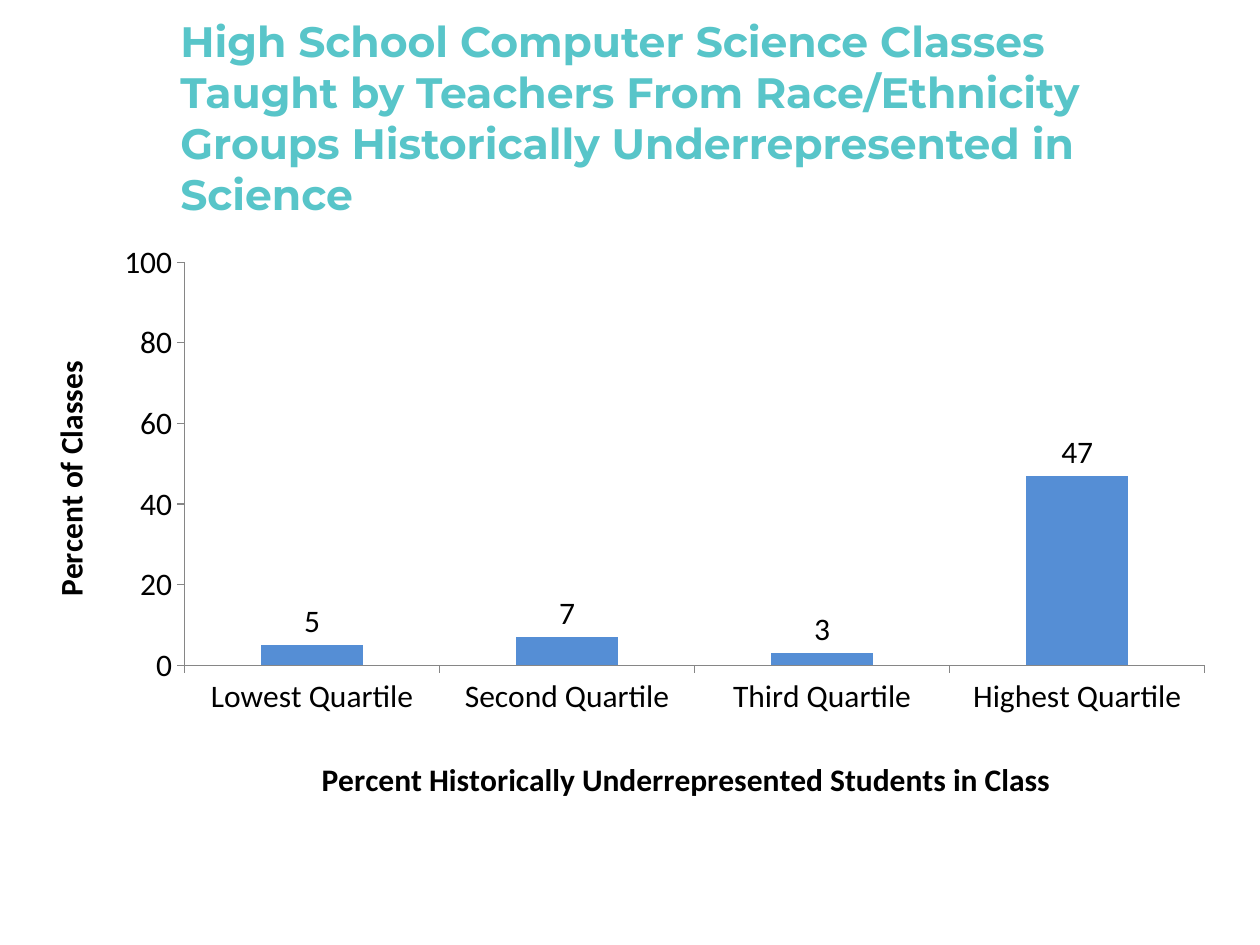
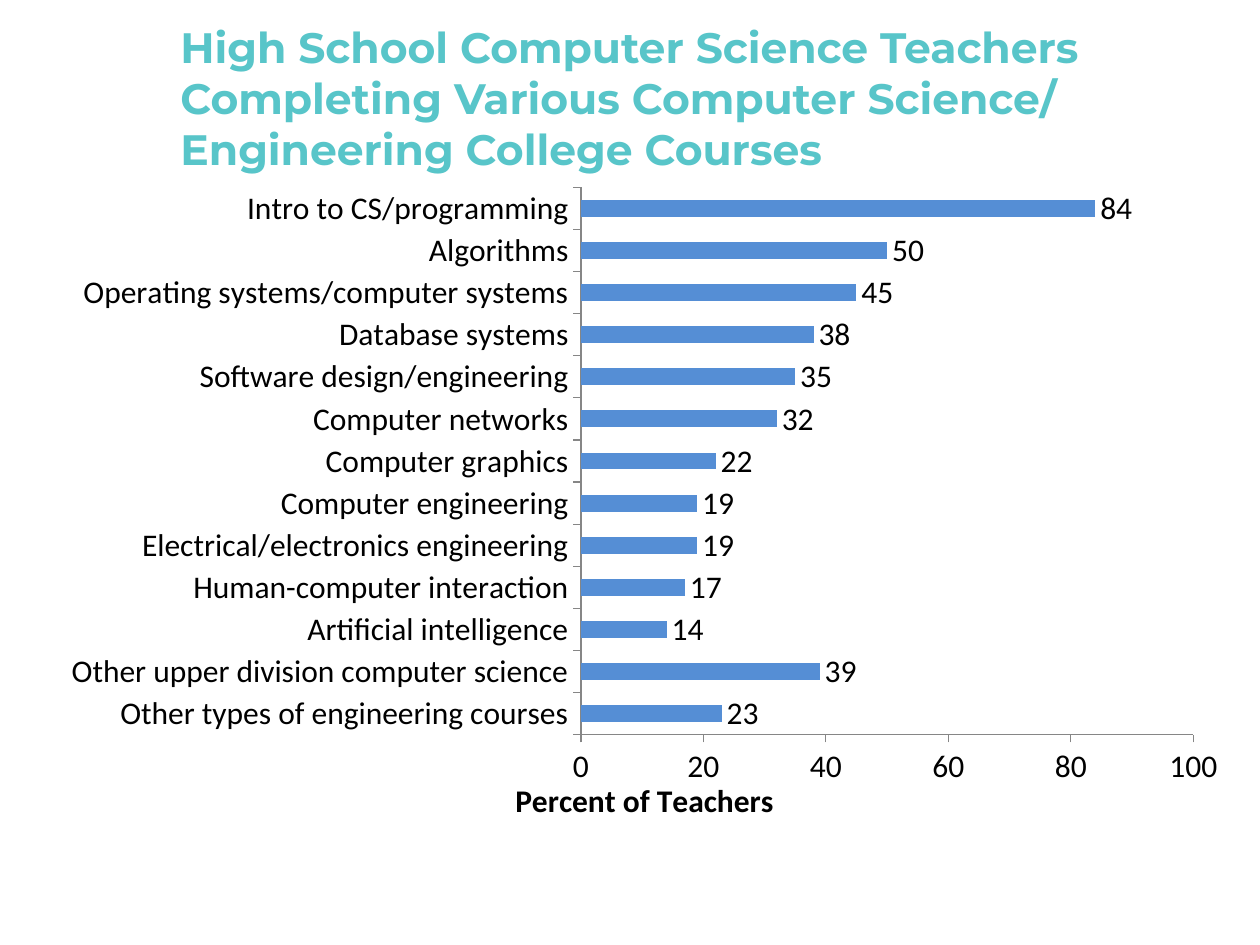
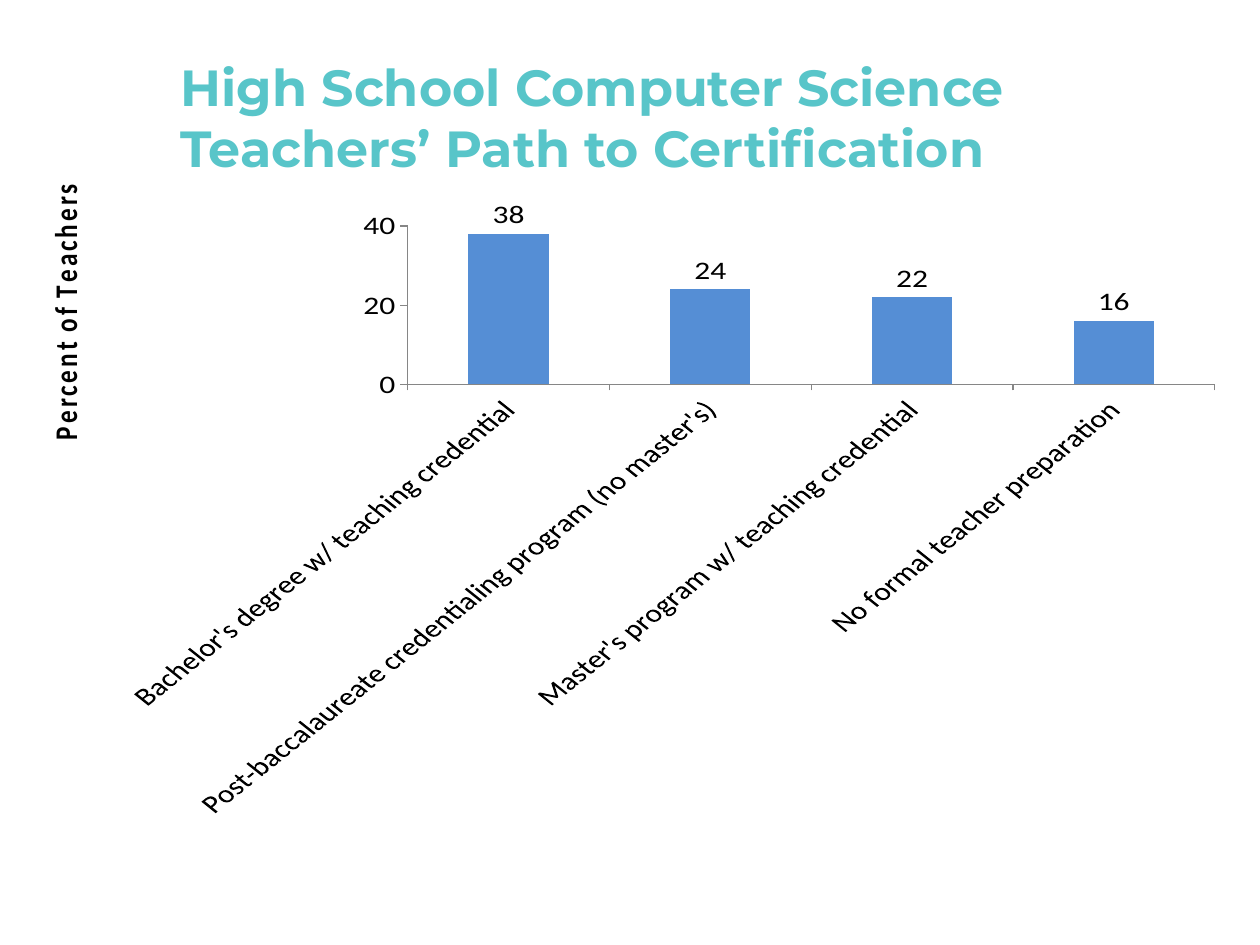
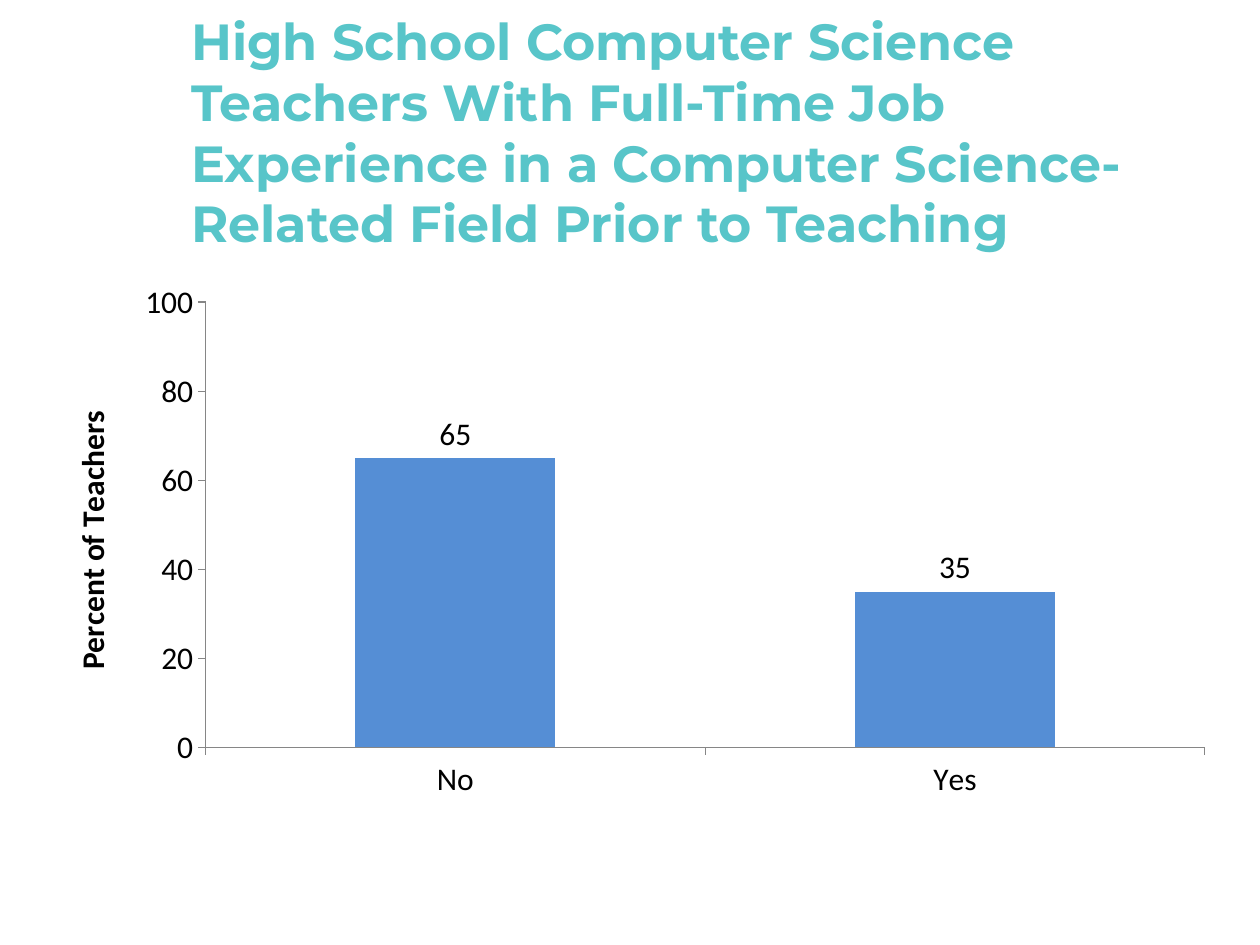
from lxml import etree
from pptx import Presentation
from pptx.chart.data import CategoryChartData
from pptx.dml.color import RGBColor
from pptx.enum.chart import XL_CHART_TYPE, XL_LABEL_POSITION, XL_TICK_MARK
from pptx.enum.text import MSO_ANCHOR
from pptx.oxml.ns import qn
from pptx.util import Pt

COLUMN = XL_CHART_TYPE.COLUMN_CLUSTERED
BAR = XL_CHART_TYPE.BAR_CLUSTERED
OUT_END = XL_LABEL_POSITION.OUTSIDE_END
OUT, NONE = XL_TICK_MARK.OUTSIDE, XL_TICK_MARK.NONE
MIDDLE = MSO_ANCHOR.MIDDLE

COLORS = {"title": "58C5C9", "bar": "558ED5", "text": "000000", "axis": "868686"}
HEAD_FONT, BODY_FONT = "Montserrat", "Calibri"
UP, SLANT = -5400000, -2700000  # text angles in 1/60000 degree


def color(key):
    return RGBColor.from_string(COLORS[key])


def style(font, size, key, name, bold):
    font.size, font.name, font.bold = Pt(size), name, bold
    font.color.rgb = color(key)


def add_title(slide, box, lines, size, drop=0):
    """Title centred on the box height, moved down by a larger top inset."""
    frame = slide.shapes.add_textbox(*map(Pt, box)).text_frame
    frame.word_wrap = True
    frame.vertical_anchor = MIDDLE
    frame.margin_top = Pt(3.6 + drop)
    para = frame.paragraphs[0]
    for i, line in enumerate(lines):
        if i:
            para.add_line_break()
        run = para.add_run()
        run.text = line
        style(run.font, size, "title", HEAD_FONT, True)


def set_layout(node, index, box, spot):
    """Fix a chart part at a spot (x, y and maybe w, h) in points within box."""
    old = node.find(qn("c:layout"))
    if old is not None:
        node.remove(old)
    layout = etree.Element(qn("c:layout"))
    manual = etree.SubElement(layout, qn("c:manualLayout"))
    items = [("xMode", "edge"), ("yMode", "edge")]
    if len(spot) == 4:
        items.insert(0, ("layoutTarget", "inner"))
    sizes = (box[2], box[3]) * 2
    items += [(tag, f"{part / whole:.4f}")
              for tag, part, whole in zip("xywh", spot, sizes)]
    for tag, val in items:
        etree.SubElement(manual, qn("c:" + tag)).set("val", val)
    node.insert(index, layout)


def turn(node, angle):
    body = next(node.iter(qn("a:bodyPr")))
    body.set("rot", str(angle))
    body.set("vert", "horz")


def name_axis(axis, box, text, spot=None, angle=0):
    title = axis.axis_title
    run = title.text_frame.paragraphs[0].add_run()
    run.text = text
    style(run.font, 18, "text", BODY_FONT, True)
    node = title._element
    turn(node, angle)
    if spot:
        set_layout(node, 1, box, spot)


def add_bars(slide, box, kind, rows, val_name, cat_name=None, plot=None,
             low=None, top=None, gap=150, slant=False):
    """Bar or column chart; plot and axis names are placed within the box."""
    data = CategoryChartData()
    data.categories = [cat for cat, _ in rows]
    data.add_series("Series 1", [val for _, val in rows])
    chart = slide.shapes.add_chart(kind, *map(Pt, box), data).chart
    chart.has_legend = chart.has_title = False
    style(chart.font, 18, "text", BODY_FONT, False)

    # Bars and their values
    bars = chart.plots[0]
    bars.gap_width = gap
    bars.vary_by_categories = False
    fill = bars.series[0].format.fill
    fill.solid()
    fill.fore_color.rgb = color("bar")
    bars.has_data_labels = True
    tags = bars.data_labels
    tags.show_value = True
    tags.position = OUT_END
    style(tags.font, 18, "text", BODY_FONT, False)

    # Axes
    cats, vals = chart.category_axis, chart.value_axis
    for axis in (cats, vals):
        axis.has_major_gridlines = False
        axis.major_tick_mark, axis.minor_tick_mark = OUT, NONE
        axis.format.line.color.rgb = color("axis")
        axis.format.line.width = Pt(0.75)
        style(axis.tick_labels.font, 18, "text", BODY_FONT, False)
    vals.major_unit = 20
    if low is not None:
        vals.minimum_scale = low
    if top is not None:
        vals.maximum_scale = top
    if slant:
        turn(cats._element.find(qn("c:txPr")), SLANT)

    # Places of plot and axis names
    if plot:
        area = next(chart._chartSpace.iter(qn("c:plotArea")))
        set_layout(area, 0, box, plot)
    name_axis(vals, box, *val_name, angle=UP if kind == COLUMN else 0)
    if cat_name:
        name_axis(cats, box, *cat_name)


TITLE_BOX = (96, 21.6, 588, 68.4)
TALL_BOX = (96, 21.6, 588, 90)
JOB_BOX = (102.2, 30, 582, 90)


def show_groups(slide):
    add_title(slide, TITLE_BOX, [
        "High School Computer Science Classes Taught by Teachers From "
        "Race/Ethnicity Groups Historically Underrepresented in Science"],
        24.3, drop=22)
    rows = [("Lowest Quartile", 5), ("Second Quartile", 7),
            ("Third Quartile", 3), ("Highest Quartile", 47)]
    add_bars(slide, (12, 132, 690, 330), COLUMN, rows,
             ("Percent of Classes",),
             ("Percent Historically Underrepresented Students in Class",
              (168.5, 298.5)), plot=(93.5, 18, 583, 231), top=100)


def show_courses(slide):
    add_title(slide, TITLE_BOX, [
        "High School Computer Science Teachers Completing Various "
        "Computer Science/", "Engineering College Courses"], 24.3)
    rows = [("Other types of engineering courses", 23),
            ("Other upper division computer science", 39),
            ("Artificial intelligence", 14),
            ("Human-computer interaction", 17),
            ("Electrical/electronics engineering", 19),
            ("Computer engineering", 19),
            ("Computer graphics", 22),
            ("Computer networks", 32),
            ("Software design/engineering", 35),
            ("Database systems", 38),
            ("Operating systems/computer systems", 45),
            ("Algorithms", 50),
            ("Intro to CS/programming", 84)]
    add_bars(slide, (30, 96, 672, 378), BAR, rows, ("Percent of Teachers",),
             plot=(302, 11, 350, 313), low=0)


def show_paths(slide):
    add_title(slide, TALL_BOX, [
        "High School Computer Science Teachers’ Path to Certification"], 29)
    rows = [("Bachelor's degree w/ teaching credential", 38),
            ("Post-baccalaureate credentialing program (no master's)", 24),
            ("Master's program w/ teaching credential", 22),
            ("No formal teacher preparation", 16)]
    add_bars(slide, (12, 114, 696, 354), COLUMN, rows,
             ("Percent of Teachers", (9.5, 20)), low=0, gap=151, slant=True)


def show_jobs(slide):
    add_bars(slide, (24, 156, 678, 306), COLUMN, [("No", 65), ("Yes", 35)],
             ("Percent of Teachers",), plot=(93.5, 16.7, 571, 254.5), top=100)
    add_title(slide, JOB_BOX, [
        "High School Computer Science Teachers With Full-Time Job Experience "
        "in a Computer Science-Related Field Prior to Teaching"], 29)


def main():
    deck = Presentation()
    deck.slide_width, deck.slide_height = Pt(720), Pt(540)
    blank = deck.slide_layouts[6]
    for show in (show_groups, show_courses, show_paths, show_jobs):
        show(deck.slides.add_slide(blank))
    deck.save("out.pptx")


if __name__ == "__main__":
    main()
